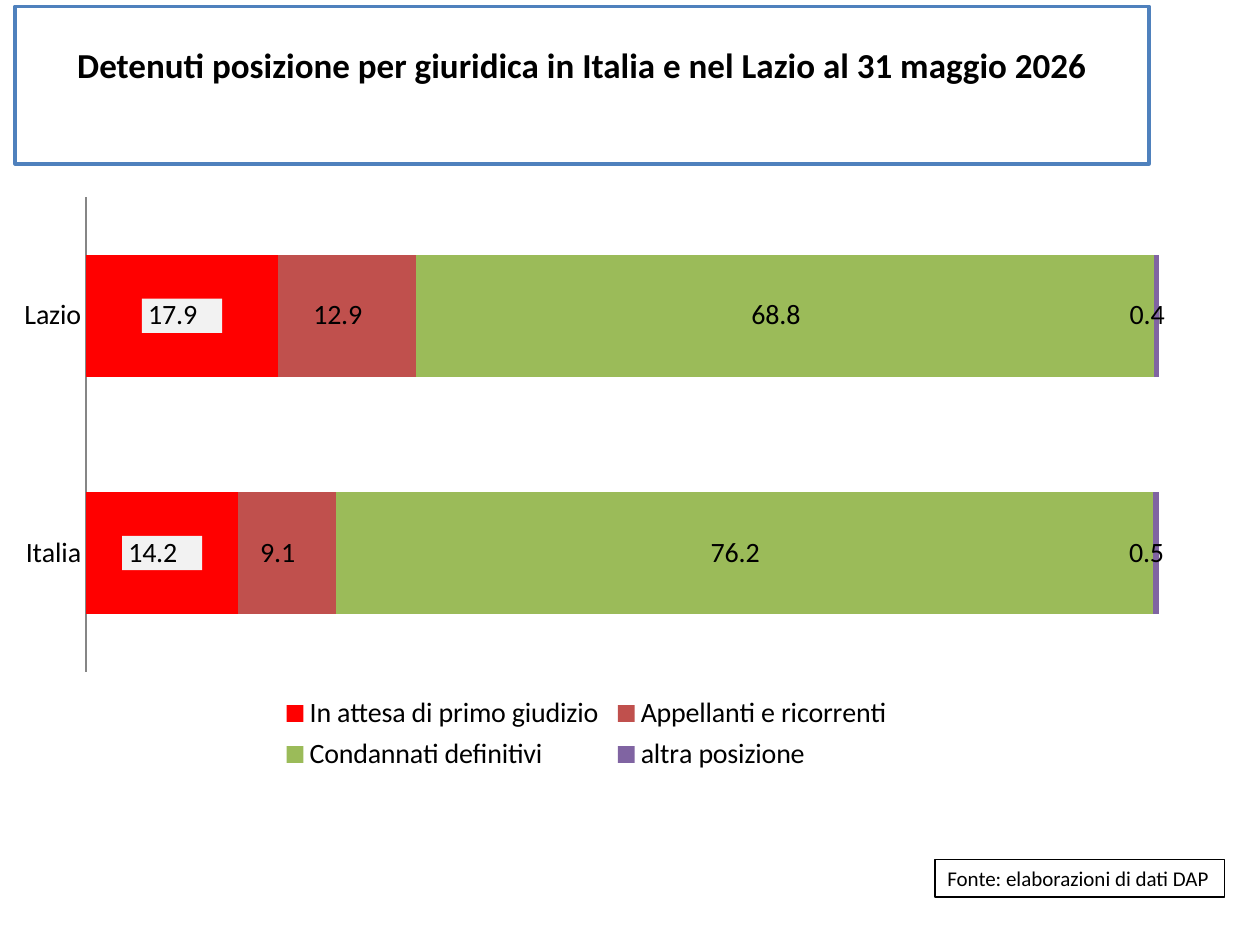
from lxml import etree
from pptx import Presentation
from pptx.chart.data import CategoryChartData
from pptx.dml.color import RGBColor
from pptx.enum import chart as ch, shapes, text
from pptx.oxml import parse_xml
from pptx.oxml.ns import nsdecls, qn
from pptx.util import Inches, Pt

THEME = {
    "font": "Calibri", "ink": "000000", "paper": "FFFFFF",
    "frame": "4F81BD", "axis": "868686", "label_fill": "F2F2F2",
    "title": 20, "chart": 16, "source": 12,
}
BOXES = [
    {"text": "Detenuti posizione per giuridica in Italia e nel Lazio al 31 maggio 2026",
     "at": (0.12, 0.05, 9, 1.25), "line": THEME["frame"], "width": 2,
     "font": {"size": Pt(THEME["title"]), "bold": True},
     "align": text.PP_ALIGN.CENTER,
     "frame": {"word_wrap": True, "margin_bottom": Inches(0.38)}},
    {"text": "Fonte: elaborazioni di dati DAP",
     "at": (7.42, 6.82, 2.3, 0.3), "line": THEME["ink"], "width": 0.75,
     "font": {"size": Pt(THEME["source"]), "bold": False},
     "align": text.PP_ALIGN.LEFT,
     "frame": {"word_wrap": False,
               "auto_size": text.MSO_AUTO_SIZE.SHAPE_TO_FIT_TEXT}},
]
CHART_AT = (0.02, 1.47, 9.46, 4.71)
PLOT_LAYOUT = (0.07, 0.02, 0.9, 0.8)
LEGEND_LAYOUT = (0.23, 0.85, 0.52, 0.17)
NUMBER_FORMAT = r"_-* #,##0.0\ _€_-;\-* #,##0.0\ _€_-;_-* "
CATEGORIES = ["Lazio", "Italia"]
SERIES = [
    ("In attesa di primo giudizio", (17.9, 14.2), "FF0000"),
    ("Appellanti e ricorrenti", (12.9, 9.1), "C0504D"),
    ("Condannati definitivi", (68.8, 76.2), "9BBB59"),
    ("altra posizione", (0.4, 0.5), "8064A2"),
]


def rgb(value):
    return RGBColor.from_string(value)


def apply(obj, values):
    for name, value in values.items():
        setattr(obj, name, value)


def paint(fill, color):
    fill.solid()
    fill.fore_color.rgb = rgb(color)


def add_box(slide, box):
    sp = slide.shapes.add_shape(shapes.MSO_SHAPE.RECTANGLE, *map(Inches, box["at"]))
    sp.shadow.inherit = False
    paint(sp.fill, THEME["paper"])
    sp.line.color.rgb = rgb(box["line"])
    sp.line.width = Pt(box["width"])
    tf = sp.text_frame
    apply(tf, {"vertical_anchor": text.MSO_ANCHOR.MIDDLE, **box["frame"]})
    p = tf.paragraphs[0]
    p.alignment = box["align"]
    r = p.add_run()
    r.text = box["text"]
    apply(r.font, {"name": THEME["font"], **box["font"]})
    r.font.color.rgb = rgb(THEME["ink"])


def manual_layout(box, inner=False):
    layout = parse_xml(f'<c:layout {nsdecls("c")}><c:manualLayout/></c:layout>')
    values = [("layoutTarget", "inner")] if inner else []
    values += [("xMode", "edge"), ("yMode", "edge"), *zip("xywh", box)]
    for tag, value in values:
        etree.SubElement(layout[0], qn(f"c:{tag}")).set("val", str(value))
    return layout


def place(parent, layout, after=None):
    for old in parent.findall(qn("c:layout")):
        parent.remove(old)
    if after is None:
        parent.insert(0, layout)
    else:
        parent.find(qn(after)).addnext(layout)


def add_position_chart(slide):
    data = CategoryChartData(number_format=NUMBER_FORMAT)
    data.categories = CATEGORIES
    for name, values, _ in SERIES:
        data.add_series(name, values)
    chart = slide.shapes.add_chart(
        ch.XL_CHART_TYPE.BAR_STACKED_100, *map(Inches, CHART_AT), data).chart
    apply(chart, {"has_title": False, "has_legend": True})
    apply(chart.font, {"name": THEME["font"], "size": Pt(THEME["chart"])})
    chart.font.color.rgb = rgb(THEME["ink"])
    apply(chart.legend, {"position": ch.XL_LEGEND_POSITION.BOTTOM,
                         "include_in_layout": False})

    axis = chart.category_axis
    apply(axis, {"reverse_order": True, "has_major_gridlines": False,
                 "major_tick_mark": ch.XL_TICK_MARK.NONE,
                 "minor_tick_mark": ch.XL_TICK_MARK.NONE})
    axis.format.line.color.rgb = rgb(THEME["axis"])
    apply(chart.value_axis, {"visible": False, "has_major_gridlines": False})

    plot = chart.plots[0]
    apply(plot, {"gap_width": 95, "overlap": 100, "vary_by_categories": False})
    for series, (_, _, color) in zip(plot.series, SERIES):
        paint(series.format.fill, color)
        apply(series.data_labels, {"show_value": True,
                                   "number_format": NUMBER_FORMAT,
                                   "number_format_is_linked": False})

    labels = plot.series[0]._element.find(qn("c:dLbls"))
    labels.find(qn("c:numFmt")).addnext(parse_xml(
        f'<c:spPr {nsdecls("c", "a")}><a:solidFill>'
        f'<a:srgbClr val="{THEME["label_fill"]}"/></a:solidFill></c:spPr>'))
    place(chart._chartSpace.chart.plotArea, manual_layout(PLOT_LAYOUT, inner=True))
    place(chart.legend._element, manual_layout(LEGEND_LAYOUT), after="c:legendPos")


def main():
    prs = Presentation()
    apply(prs, {"slide_width": Inches(10), "slide_height": Inches(7.5)})
    slide = prs.slides.add_slide(prs.slide_layouts[6])
    for box in BOXES:
        add_box(slide, box)
    add_position_chart(slide)
    prs.save("out.pptx")


if __name__ == "__main__":
    main()
